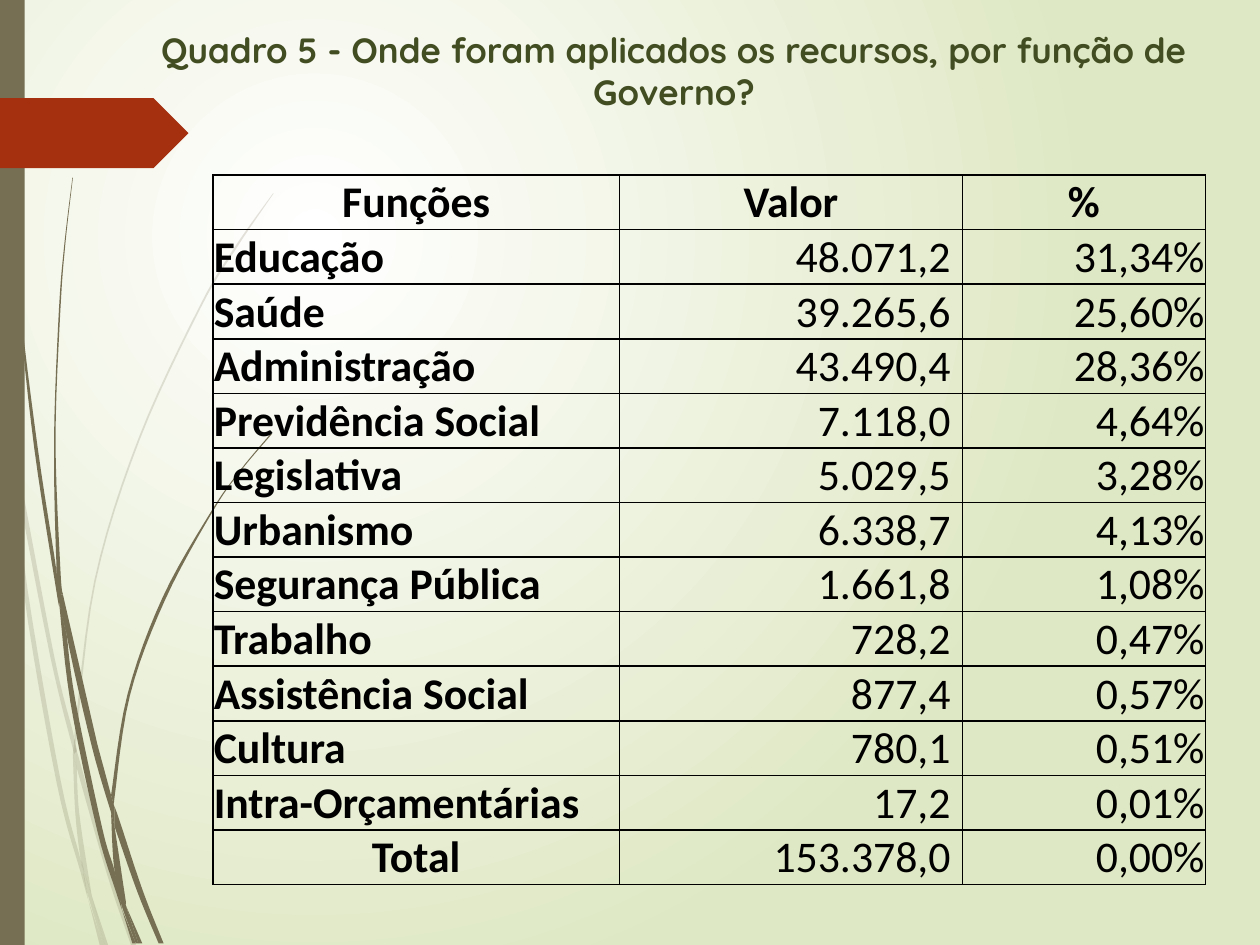
from dataclasses import dataclass

from lxml.etree import SubElement
from pptx import Presentation
from pptx.dml.color import RGBColor
from pptx.enum.shapes import MSO_SHAPE
from pptx.enum.text import MSO_ANCHOR, PP_ALIGN
from pptx.oxml import parse_xml
from pptx.oxml.ns import nsdecls, qn
from pptx.util import Cm, Pt


@dataclass(frozen=True)
class Theme:
    center: str = "FFFFFF"
    edge: str = "DFE8C4"
    stem: str = "766F54"
    arrow: str = "A53010"
    title: str = "424D22"
    ink: str = "000000"
    title_font: str = "Quicksand"
    table_font: str = "Calibri"
    title_size: int = 20
    table_size: int = 25
    pale_alpha: int = 20


THEME = Theme()
TITLE = "Quadro 5 - Onde foram aplicados os recursos, por função de Governo?"
HEADER = ("Funções", "Valor", "%")
ROWS = [
    ("Educação", "48.071,2", "31,34%"),
    ("Saúde", "39.265,6", "25,60%"),
    ("Administração", "43.490,4", "28,36%"),
    ("Previdência Social", "7.118,0", "4,64%"),
    ("Legislativa", "5.029,5", "3,28%"),
    ("Urbanismo", "6.338,7", "4,13%"),
    ("Segurança Pública", "1.661,8", "1,08%"),
    ("Trabalho", "728,2", "0,47%"),
    ("Assistência Social", "877,4", "0,57%"),
    ("Cultura", "780,1", "0,51%"),
    ("Intra-Orçamentárias", "17,2", "0,01%"),
    ("Total", "153.378,0", "0,00%"),
]
COLUMN_WIDTHS = (8.2, 6.91, 4.9)
ROW_HEIGHT = 1.1

PALE_BLADES = [
    ([(0.19, 8.89), (0.15, 8.18), (0, 7.16)], [(0, 7.59), (0.18, 8.74), (0.2, 8.89)]),
    ([(1.5, 15.21), (1.5, 14.88), (1.09, 13.21), (0.25, 8.76)],
     [(0.3, 9.55), (1.02, 13.26), (1.5, 15.21)]),
    ([(1.55, 15.14), (1.63, 15.42), (2.24, 17.58), (2.74, 19.05)],
     [(2.64, 19.05), (2.16, 17.63), (1.55, 15.49)]),
    ([(2.11, 19.05), (2.18, 19.05)], [(1.85, 18.06)]),
    ([(1.78, 18.14), (1.63, 17.6), (1.14, 15.77), (0.48, 11.94), (0.2, 8.89)],
     [(0.3, 9.55), (0.56, 11.91), (1.22, 15.72), (1.63, 17.35), (1.75, 17.96)]),
    ([(1.47, 15.21), (1.52, 16.41), (1.63, 17.35), (1.7, 17.58), (1.85, 18.06)],
     [(1.83, 17.93), (1.6, 16.41), (1.55, 15.49)]),
    ([(1.55, 15.14), (1.55, 14.83), (1.93, 11.73), (2.82, 8.86), (4.04, 6.22), (4.75, 5.03), (5.51, 3.91)],
     [(5.51, 3.89), (4.72, 5), (4.01, 6.2), (2.79, 8.84), (1.9, 11.71), (1.5, 14.83)]),
    ([(1.78, 18.14), (2.01, 19.05)], [(2.08, 19.05)]),
    ([(1.55, 15.49), (1.55, 15.14)], [(1.5, 14.88), (1.47, 15.21)]),
    ([(1.65, 17.35), (1.75, 17.96), (2.08, 19.05)], [(2.11, 19.05), (1.85, 18.06), (1.7, 17.58)]),
]
DARK_BLADES = [
    ([(0.08, 0), (0.1, 1.22), (0.15, 2.77), (0.38, 5.89), (0.76, 9.02), (1.14, 11.51), (1.19, 12.22)],
     [(1.17, 12.12), (0.69, 9.02), (0.36, 5.92), (0.13, 2.79), (0.08, 1.22), (0.05, 0)]),
    ([(2.24, 16.38), (1.85, 15.04), (1.35, 12.83), (1.27, 11.99)], [(1.96, 14.99), (2.24, 16.03)]),
    ([(2.31, 16.28), (2.39, 16.48), (2.87, 17.93), (3.3, 19.02)],
     [(3.2, 19.02), (2.77, 17.98), (2.31, 16.66)]),
    ([(2.46, 18.34), (2.34, 17.98), (1.96, 16.74), (1.42, 14.15), (1.19, 12.12)],
     [(1.35, 12.83), (1.52, 14.12), (2.06, 16.69), (2.31, 17.55), (2.44, 18.21)]),
    ([(1.27, 11.99), (1.22, 11.51), (1.12, 8.86), (1.22, 6.22), (1.32, 4.9), (1.47, 3.58)],
     [(1.46, 3.58), (1.3, 4.9), (1.19, 6.22), (1.09, 8.86), (1.14, 11.4), (1.24, 11.99)]),
    ([(2.54, 18.26), (2.79, 19.02)], [(2.87, 19.02)]),
    ([(1.14, 11.4), (1.14, 11.51), (1.19, 12.12), (1.35, 12.83)], [(1.27, 11.99), (1.24, 11.99)]),
    ([(2.31, 16.28), (2.31, 16.08), (2.62, 14.02), (3.33, 12.09), (4.29, 10.31), (4.85, 9.5), (5.49, 8.74)],
     [(5.46, 8.74), (4.85, 9.47), (4.27, 10.29), (3.28, 12.04), (2.57, 14), (2.24, 16.03)]),
    ([(2.46, 18.34), (2.67, 19.02)], [(2.74, 19.02)]),
    ([(2.24, 16.38), (2.31, 17.55), (2.54, 18.26)], [(2.54, 18.19), (2.31, 16.66)]),
    ([(2.24, 16.38), (2.31, 16.66)], [(2.31, 16.28), (2.24, 16.03)]),
    ([(2.31, 17.55), (2.44, 18.21), (2.74, 19.02)], [(2.79, 19.02), (2.54, 18.26), (2.44, 17.93)]),
]


def paint(shape, color, alpha=100):
    shape.shadow.inherit = False
    shape.fill.solid()
    shape.fill.fore_color.rgb = RGBColor.from_string(color)
    shape.line.fill.background()
    if alpha < 100:
        color_element = shape.fill._xPr.find(f".//{qn('a:srgbClr')}")
        SubElement(color_element, qn("a:alpha")).set("val", str(alpha * 1000))


def smooth_edge(points, steps=6):
    padded = [points[0], *points, points[-1]]
    curve = [points[0]]
    for before, start, end, after in zip(padded, padded[1:], padded[2:], padded[3:]):
        for step in range(1, steps + 1):
            t = step / steps
            curve.append(tuple(
                b + 0.5 * t * (c - a + t * (2 * a - 5 * b + 4 * c - d + t * (3 * (b - c) + d - a)))
                for a, b, c, d in zip(before, start, end, after)))
    return curve


def add_blade(slide, edges, alpha):
    outline = [(Cm(x), Cm(y)) for edge in edges for x, y in smooth_edge(edge)]
    builder = slide.shapes.build_freeform(*outline[0])
    builder.add_line_segments(outline[1:], close=True)
    paint(builder.convert_to_shape(), THEME.stem, alpha)


def set_background(slide):
    fill = slide.background.fill
    fill.gradient()
    for stop, color in zip(fill.gradient_stops, (THEME.center, THEME.edge)):
        stop.color.rgb = RGBColor.from_string(color)
    gradient = slide.element.find(f".//{qn('a:gradFill')}")
    gradient.replace(gradient.find(qn("a:lin")), parse_xml(
        f'<a:path {nsdecls("a")} path="circle">'
        '<a:fillToRect l="50000" t="50000" r="100000" b="100000"/></a:path>'))


def write(text_frame, text, font, size, color, bold, alignment):
    paragraph = text_frame.paragraphs[0]
    paragraph.text = text
    paragraph.alignment = alignment
    paragraph.font.name = font
    paragraph.font.size = Pt(size)
    paragraph.font.bold = bold
    paragraph.font.color.rgb = RGBColor.from_string(color)


def add_title(slide):
    text_frame = slide.shapes.add_textbox(Cm(1.5), Cm(0.48), Cm(24.18), Cm(1.88)).text_frame
    text_frame.word_wrap = True
    text_frame.vertical_anchor = MSO_ANCHOR.MIDDLE
    write(text_frame, TITLE, THEME.title_font, THEME.title_size, THEME.title, True, PP_ALIGN.CENTER)


def set_borders(cell):
    properties = cell._tc.get_or_add_tcPr()
    for index, side in enumerate(("lnL", "lnR", "lnT", "lnB")):
        properties.insert(index, parse_xml(
            f'<a:{side} {nsdecls("a")} w="{Pt(1)}"><a:solidFill>'
            f'<a:srgbClr val="{THEME.ink}"/></a:solidFill></a:{side}>'))


def add_function_table(slide):
    records = [HEADER, *ROWS]
    table = slide.shapes.add_table(
        len(records), len(HEADER), Cm(4.29), Cm(3.53),
        Cm(sum(COLUMN_WIDTHS)), Cm(ROW_HEIGHT * len(records))).table
    table.first_row = table.horz_banding = False
    for column, width in zip(table.columns, COLUMN_WIDTHS):
        column.width = Cm(width)
    for row_index, record in enumerate(records):
        table.rows[row_index].height = Cm(ROW_HEIGHT)
        is_header = row_index == 0
        for column_index, text in enumerate(record):
            cell = table.cell(row_index, column_index)
            cell.margin_left = cell.margin_right = cell.margin_top = Cm(0.02)
            cell.margin_bottom = Cm(0)
            cell.vertical_anchor = MSO_ANCHOR.MIDDLE if is_header else MSO_ANCHOR.BOTTOM
            if column_index == 1 and not is_header:
                cell.margin_right = Cm(0.24)
            if is_header or text == "Total":
                alignment = PP_ALIGN.CENTER
            else:
                alignment = PP_ALIGN.RIGHT if column_index else PP_ALIGN.LEFT
            write(cell.text_frame, text, THEME.table_font, THEME.table_size, THEME.ink,
                  is_header or column_index == 0, alignment)
            cell.fill.background()
            set_borders(cell)


def main():
    presentation = Presentation()
    presentation.slide_width, presentation.slide_height = Cm(25.4), Cm(19.05)
    slide = presentation.slides.add_slide(presentation.slide_layouts[6])
    set_background(slide)
    for blades, alpha in ((PALE_BLADES, THEME.pale_alpha), (DARK_BLADES, 100)):
        for edges in blades:
            add_blade(slide, edges, alpha)
    bar = slide.shapes.add_shape(MSO_SHAPE.RECTANGLE, 0, 0, Cm(0.5), Cm(19.05))
    paint(bar, THEME.stem)
    arrow = slide.shapes.add_shape(MSO_SHAPE.PENTAGON, 0, Cm(1.98), Cm(3.8), Cm(1.41))
    paint(arrow, THEME.arrow)
    add_title(slide)
    add_function_table(slide)
    presentation.save("out.pptx")


if __name__ == "__main__":
    main()
